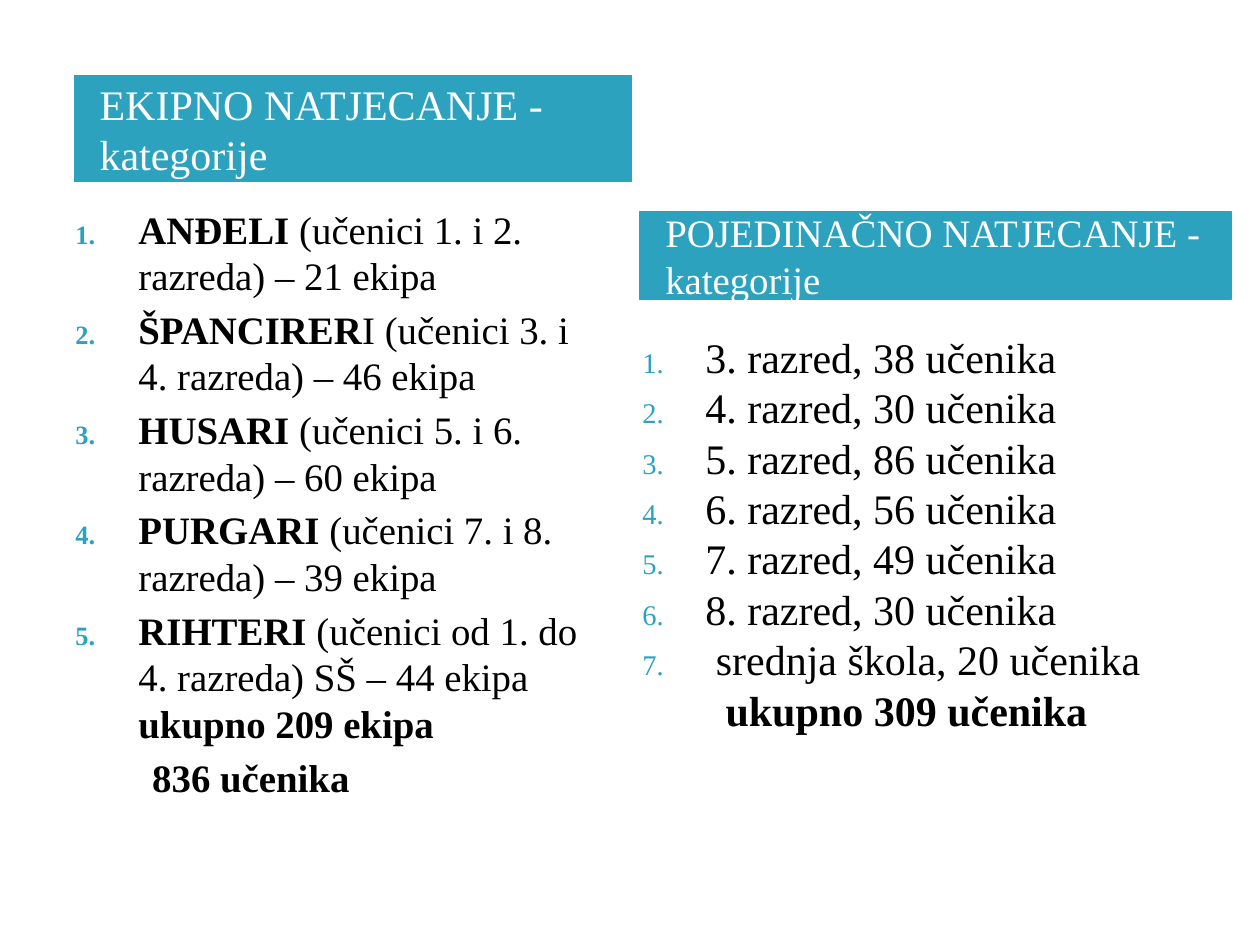
from dataclasses import dataclass

import pptx
import pptx.dml.color
import pptx.enum.shapes
import pptx.enum.text
import pptx.oxml.ns
import pptx.util
from lxml import etree

COLORS = {"teal": "2DA2BF", "white": "FFFFFF", "black": "000000"}
FONT = "Times New Roman"
COLUMNS, ROWS = 100, 75
CELL = pptx.util.Inches(0.1)
NUMBER_INDENT = 0.5


@dataclass(frozen=True)
class Area:
    column: float
    row: float
    columns: float
    rows: float

    def box(self) -> list[int]:
        return [round(CELL * n) for n in (self.column, self.row, self.columns, self.rows)]


@dataclass(frozen=True)
class Run:
    text: str
    bold: bool = False


@dataclass(frozen=True)
class Competition:
    title: str
    title_area: Area
    title_size: float
    list_area: Area
    list_size: float
    space_before: float
    categories: list[list[Run]]
    total: str
    total_indent: float


COMPETITIONS = [
    Competition(
        "EKIPNO NATJECANJE - kategorije", Area(5.9, 6, 44.2, 8.4), 24,
        Area(5, 15.8, 44.2, 43.1), 22.2, 4,
        [
            [Run("ANĐELI", True), Run(" (učenici 1. i 2. razreda) – 21 ekipa")],
            [Run("ŠPANCIRER", True), Run("I (učenici 3. i 4. razreda) – 46 ekipa")],
            [Run("HUSARI ", True), Run("(učenici 5. i 6. razreda) – 60 ekipa")],
            [Run("PURGARI ", True), Run("(učenici 7. i 8. razreda) – 39 ekipa")],
            [Run("RIHTERI ", True), Run("(učenici od 1. do 4. razreda) SŠ – 44 ekipa "),
             Run("ukupno 209 ekipa", True)],
        ],
        "836 učenika", 0.61,
    ),
    Competition(
        "POJEDINAČNO NATJECANJE - kategorije", Area(50.8, 16.8, 46.9, 7), 22.2,
        Area(50, 25.8, 44.2, 43.1), 24, 0,
        [
            [Run("3. razred, 38 učenika")],
            [Run("4. razred, 30 učenika")],
            [Run("5. razred, 86 učenika")],
            [Run("6. razred, 56 učenika")],
            [Run("7. razred, 49 učenika")],
            [Run("8. razred, 30 učenika")],
            [Run(" srednja škola, 20 učenika")],
        ],
        "ukupno 309 učenika", 0.66,
    ),
]


def rgb(name: str) -> pptx.dml.color.RGBColor:
    return pptx.dml.color.RGBColor.from_string(COLORS[name])


def add_runs(paragraph, runs: list[Run], size: float, color: str) -> None:
    for run in runs:
        part = paragraph.add_run()
        part.text = run.text
        part.font.name = FONT
        part.font.size = pptx.util.Pt(size)
        part.font.bold = run.bold
        part.font.color.rgb = rgb(color)


def set_indent(paragraph, left: float, first: float) -> None:
    properties = paragraph._p.get_or_add_pPr()
    properties.set("marL", str(pptx.util.Inches(left)))
    properties.set("indent", str(pptx.util.Inches(first)))


def add_number(paragraph) -> None:
    """Number the paragraph in small teal figures."""
    properties = paragraph._p.get_or_add_pPr()
    qn = pptx.oxml.ns.qn
    color = etree.SubElement(properties, qn("a:buClr"))
    etree.SubElement(color, qn("a:srgbClr"), val=COLORS["teal"])
    etree.SubElement(properties, qn("a:buSzPct"), val="68000")
    etree.SubElement(properties, qn("a:buAutoNum"), type="arabicPeriod")


def draw_title(slide, competition: Competition) -> None:
    banner = slide.shapes.add_shape(
        pptx.enum.shapes.MSO_SHAPE.RECTANGLE, *competition.title_area.box())
    banner.shadow.inherit = False
    banner.fill.solid()
    banner.fill.fore_color.rgb = rgb("teal")
    banner.line.color.rgb = rgb("teal")
    banner.line.width = pptx.util.Pt(0.75)
    frame = banner.text_frame
    frame.word_wrap = True
    frame.vertical_anchor = pptx.enum.text.MSO_ANCHOR.MIDDLE
    frame.margin_left = pptx.util.Inches(0.2)
    heading = frame.paragraphs[0]
    heading.alignment = pptx.enum.text.PP_ALIGN.LEFT
    add_runs(heading, [Run(competition.title)], competition.title_size, "white")


def draw_list(slide, competition: Competition) -> None:
    frame = slide.shapes.add_textbox(*competition.list_area.box()).text_frame
    frame.word_wrap = True
    lines = competition.categories + [[Run(competition.total, True)]]
    for index, runs in enumerate(lines):
        paragraph = frame.add_paragraph() if index else frame.paragraphs[0]
        if index < len(competition.categories):
            set_indent(paragraph, NUMBER_INDENT, -NUMBER_INDENT)
            add_number(paragraph)
        else:
            set_indent(paragraph, competition.total_indent, 0)
        if index:
            paragraph.space_before = pptx.util.Pt(competition.space_before)
        add_runs(paragraph, runs, competition.list_size, "black")


def main() -> None:
    deck = pptx.Presentation()
    deck.slide_width = CELL * COLUMNS
    deck.slide_height = CELL * ROWS
    slide = deck.slides.add_slide(deck.slide_layouts[6])
    for competition in COMPETITIONS:
        draw_title(slide, competition)
        draw_list(slide, competition)
    deck.save("out.pptx")


if __name__ == "__main__":
    main()
